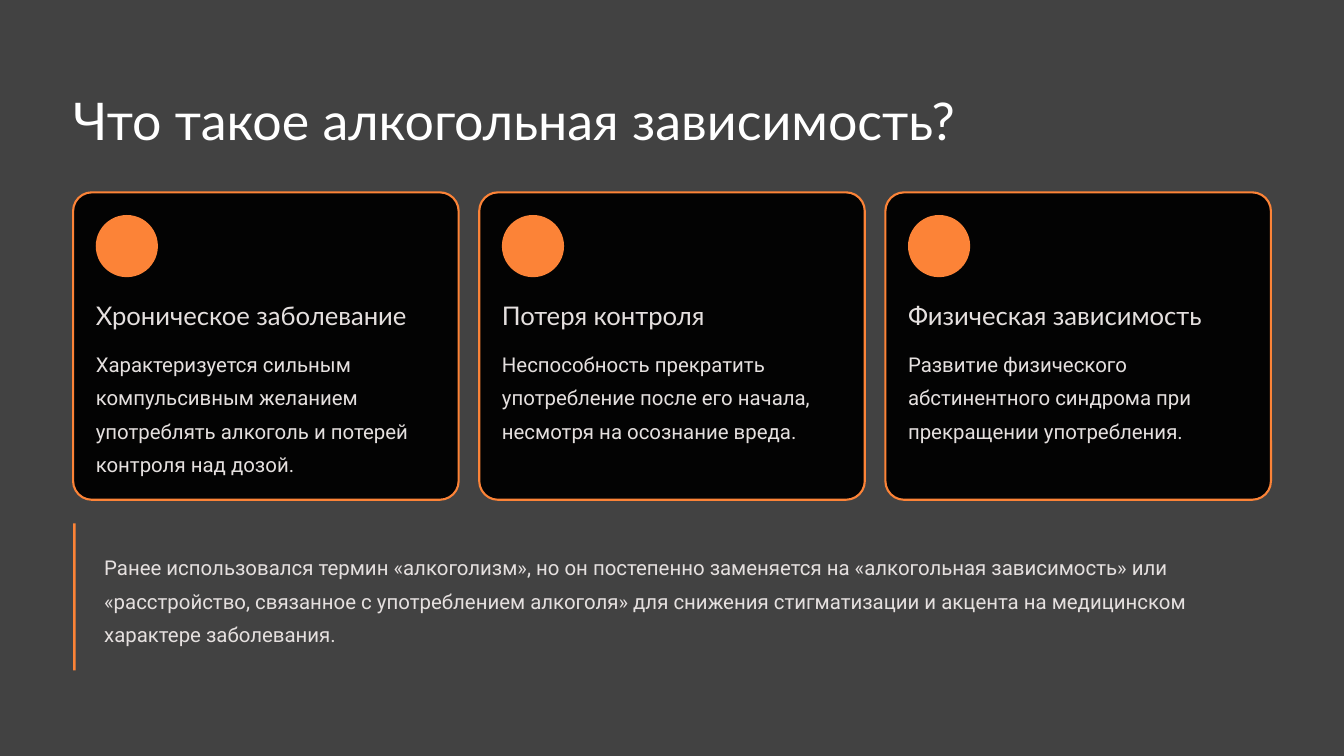
from dataclasses import dataclass

from pptx import Presentation
from pptx.dml.color import RGBColor
from pptx.enum.shapes import MSO_SHAPE
from pptx.enum.text import MSO_ANCHOR, MSO_AUTO_SIZE, PP_ALIGN
from pptx.util import Inches, Pt


@dataclass(frozen=True)
class TextStyle:
    font: str
    size: float
    leading: float
    color: RGBColor


class Theme:
    background = RGBColor.from_string("424242")
    card = RGBColor.from_string("030303")
    accent = RGBColor.from_string("FC8337")
    light = RGBColor.from_string("E5E0DF")
    white = RGBColor.from_string("FFFFFF")
    title = TextStyle("Lato", 44.5, 55.5, white)
    heading = TextStyle("Lato", 22, 27.5, light)
    body = TextStyle("Roboto", 17.5, 28.5, light)


TITLE = "Что такое алкогольная зависимость?"
CARDS = [
    ("Хроническое заболевание",
     "Характеризуется сильным компульсивным желанием употреблять алкоголь "
     "и потерей контроля над дозой."),
    ("Потеря контроля",
     "Неспособность прекратить употребление после его начала, "
     "несмотря на осознание вреда."),
    ("Физическая зависимость",
     "Развитие физического абстинентного синдрома при прекращении употребления."),
]
NOTE = (
    "Ранее использовался термин «алкоголизм», но он постепенно заменяется на "
    "«алкогольная зависимость» или «расстройство, связанное с употреблением "
    "алкоголя» для снижения стигматизации и акцента на медицинском характере "
    "заболевания."
)

MARGIN = 0.87
CONTENT_WIDTH = 14.26
CARD_GAP = 0.245
CARD_PADDING = 0.27


def write(tf, text, style):
    tf.word_wrap = True
    tf.auto_size = MSO_AUTO_SIZE.NONE
    tf.vertical_anchor = MSO_ANCHOR.TOP
    tf.margin_left = tf.margin_right = tf.margin_top = tf.margin_bottom = 0
    p = tf.paragraphs[0]
    p.text = text
    p.alignment = PP_ALIGN.LEFT
    p.line_spacing = Pt(style.leading)
    p.font.name = style.font
    p.font.size = Pt(style.size)
    p.font.color.rgb = style.color


def add_text(slide, x, y, w, h, text, style):
    box = slide.shapes.add_textbox(Inches(x), Inches(y), Inches(w), Inches(h))
    write(box.text_frame, text, style)


def add_filled(slide, kind, x, y, w, h, color):
    sp = slide.shapes.add_shape(kind, Inches(x), Inches(y), Inches(w), Inches(h))
    sp.shadow.inherit = False
    sp.fill.solid()
    sp.fill.fore_color.rgb = color
    sp.line.fill.background()
    return sp


def place_title(slide, x, y, w, h):
    title = slide.shapes.title
    title.left, title.top = Inches(x), Inches(y)
    title.width, title.height = Inches(w), Inches(h)
    write(title.text_frame, TITLE, Theme.title)


def add_card(slide, x, y, w, h, heading, body):
    panel = add_filled(slide, MSO_SHAPE.ROUNDED_RECTANGLE, x, y, w, h, Theme.card)
    panel.adjustments[0] = 0.061
    panel.line.color.rgb = Theme.accent
    panel.line.width = Pt(1.8)

    left, inner = x + CARD_PADDING, w - 2 * CARD_PADDING
    add_filled(slide, MSO_SHAPE.OVAL, left, y + CARD_PADDING, 0.74, 0.74, Theme.accent)
    add_text(slide, left, y + 1.27, inner, 0.39, heading, Theme.heading)
    add_text(slide, left, y + 1.8, inner, h - 1.8 - CARD_PADDING, body, Theme.body)


def add_cards(slide, x, y, w, h):
    card_width = (w - CARD_GAP * (len(CARDS) - 1)) / len(CARDS)
    for i, (heading, body) in enumerate(CARDS):
        left = x + i * (card_width + CARD_GAP)
        add_card(slide, left, y, card_width, h, heading, body)


def add_note(slide, x, y, w, h):
    indent, inset = 0.37, 0.28
    add_text(slide, x + indent, y + inset, w - indent, h - 2 * inset, NOTE, Theme.body)
    add_filled(slide, MSO_SHAPE.RECTANGLE, x, y, 0.03, h, Theme.accent)


def main():
    prs = Presentation()
    prs.slide_width, prs.slide_height = Inches(16), Inches(9)
    slide = prs.slides.add_slide(prs.slide_layouts[5])
    slide.background.fill.solid()
    slide.background.fill.fore_color.rgb = Theme.background

    place_title(slide, MARGIN, 1.02, CONTENT_WIDTH, 0.78)
    add_cards(slide, MARGIN, 2.29, CONTENT_WIDTH, 3.66)
    add_note(slide, MARGIN, 6.23, CONTENT_WIDTH, 1.75)
    prs.save("out.pptx")


if __name__ == "__main__":
    main()
